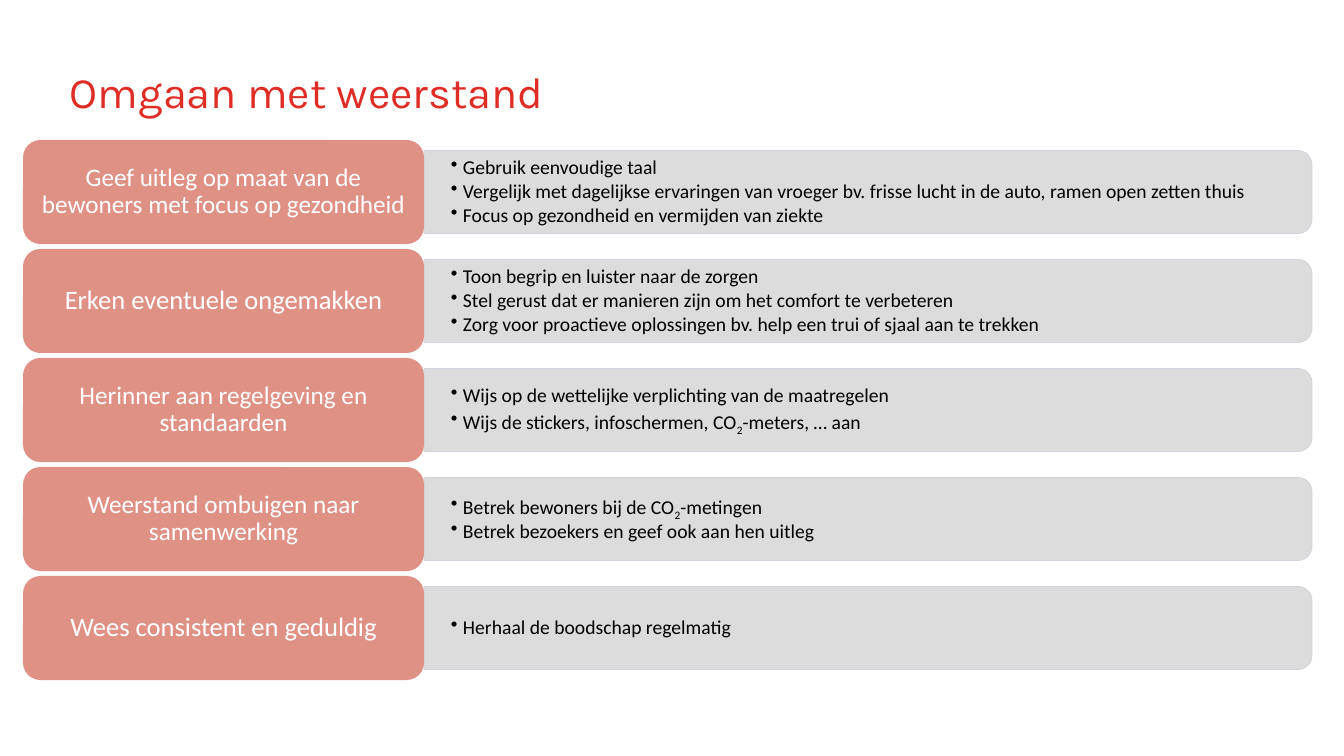
from lxml import etree
from pptx import Presentation
from pptx import util as u
from pptx.dml.color import RGBColor
from pptx.enum import shapes, text
from pptx.oxml.ns import qn

COLORS = {
    "title": "DF2D26",
    "label": "DF9186",
    "bar": "D9D9D9",
    "bar_line": "CCD3DB",
    "white": "FFFFFF",
    "black": "000000",
}
EMU_PER_PX = 914400 / 100.8

LABEL_LEFT, LABEL_WIDTH, LABEL_HEIGHT = 23, 401, 104
BAR_LEFT, BAR_WIDTH, BAR_HEIGHT = 424, 888, 83
BULLETS_WIDTH, BULLETS_HEIGHT = 884, 75
FIRST_ROW, ROW_PITCH = 140, 109

# label, label size in points, label side inset in px, bullets
ROWS = [
    ("Geef uitleg op maat van de bewoners met focus op gezondheid", 18, 7, [
        "Gebruik eenvoudige taal",
        "Vergelijk met dagelijkse ervaringen van vroeger bv. frisse lucht "
        "in de auto, ramen open zetten thuis",
        "Focus op gezondheid en vermijden van ziekte",
    ]),
    ("Erken eventuele ongemakken", 19, 10, [
        "Toon begrip en luister naar de zorgen",
        "Stel gerust dat er manieren zijn om het comfort te verbeteren",
        "Zorg voor proactieve oplossingen bv. help een trui of sjaal aan te trekken",
    ]),
    ("Herinner aan regelgeving en standaarden", 18, 10, [
        "Wijs op de wettelijke verplichting van de maatregelen",
        "Wijs de stickers, infoschermen, CO2-meters, … aan",
    ]),
    ("Weerstand ombuigen naar samenwerking", 18, 10, [
        "Betrek bewoners bij de CO2-metingen",
        "Betrek bezoekers en geef ook aan hen uitleg",
    ]),
    ("Wees consistent en geduldig", 19, 10, [
        "Herhaal de boodschap regelmatig",
    ]),
]


def px(length):
    return u.Emu(round(length * EMU_PER_PX))


def color(name):
    return RGBColor.from_string(COLORS[name])


def set_alpha(fill, percent):
    """Make a solid fill partly transparent."""
    value = fill._xPr.find(qn("a:solidFill"))[0]
    etree.SubElement(value, qn("a:alpha")).set("val", str(percent * 1000))


def set_frame(box, side, edge):
    """Wrap and centre the text vertically, with side and top/bottom insets."""
    frame = box.text_frame
    frame.word_wrap = True
    frame.vertical_anchor = text.MSO_ANCHOR.MIDDLE
    frame.margin_left = frame.margin_right = px(side)
    frame.margin_top = frame.margin_bottom = px(edge)
    return frame


def style(para, size, font_name, color_name):
    para.line_spacing = 0.9
    para.font.size = u.Pt(size)
    para.font.name = font_name
    para.font.color.rgb = color(color_name)


def add_title(page, words):
    box = page.shapes.add_textbox(px(60), px(66), px(1190), px(57))
    para = set_frame(box, 10, 5).paragraphs[0]
    para.add_run().text = words
    style(para, 31, "Karla", "title")


def add_bar(page, middle):
    """Draw a bar rounded at its right end: a top-rounded shape turned 90 degrees."""
    center = BAR_LEFT + BAR_WIDTH / 2
    bar = page.shapes.add_shape(
        shapes.MSO_SHAPE.ROUND_2_SAME_RECTANGLE,
        px(center - BAR_HEIGHT / 2), px(middle - BAR_WIDTH / 2),
        px(BAR_HEIGHT), px(BAR_WIDTH))
    bar.rotation = 90
    bar.shadow.inherit = False
    bar.fill.solid()
    bar.fill.fore_color.rgb = color("bar")
    set_alpha(bar.fill, 90)
    bar.line.width = u.Pt(0.5)
    bar.line.fill.solid()
    bar.line.color.rgb = color("bar_line")
    set_alpha(bar.line.fill, 90)


def add_spans(para, words):
    """Add the words, with the 2 of each CO2 as a subscript."""
    for index, part in enumerate(words.split("CO2")):
        if index:
            span = para.add_run()
            span.text = "2"
            span.font._element.set("baseline", "-25000")
        para.add_run().text = part + ("CO" if index < words.count("CO2") else "")


def add_bullets(page, middle, items):
    box = page.shapes.add_textbox(
        px(BAR_LEFT), px(middle - BULLETS_HEIGHT / 2),
        px(BULLETS_WIDTH), px(BULLETS_HEIGHT))
    frame = set_frame(box, 27, 14)
    for index, words in enumerate(items):
        para = frame.add_paragraph() if index else frame.paragraphs[0]
        add_spans(para, words)
        properties = para._p.get_or_add_pPr()
        properties.set("marL", str(px(12)))
        properties.set("indent", str(-px(12)))
        etree.SubElement(properties, qn("a:buChar")).set("char", "•")
        para.space_after = u.Pt(2)
        style(para, 14, "Calibri", "black")


def add_label(page, top, words, size, inset):
    label = page.shapes.add_shape(
        shapes.MSO_SHAPE.ROUNDED_RECTANGLE,
        px(LABEL_LEFT), px(top), px(LABEL_WIDTH), px(LABEL_HEIGHT))
    label.shadow.inherit = False
    label.fill.solid()
    label.fill.fore_color.rgb = color("label")
    label.line.fill.background()
    para = set_frame(label, inset, 5).paragraphs[0]
    para.add_run().text = words
    para.alignment = text.PP_ALIGN.CENTER
    style(para, size, "Calibri", "white")


def main():
    deck = Presentation()
    deck.slide_width, deck.slide_height = px(1344), px(756)
    page = deck.slides.add_slide(deck.slide_layouts[6])
    add_title(page, "Omgaan met weerstand")
    for index, (words, size, inset, items) in enumerate(ROWS):
        top = FIRST_ROW + index * ROW_PITCH
        middle = top + LABEL_HEIGHT / 2
        add_bar(page, middle)
        add_bullets(page, middle, items)
        add_label(page, top, words, size, inset)
    deck.save("out.pptx")


if __name__ == "__main__":
    main()
